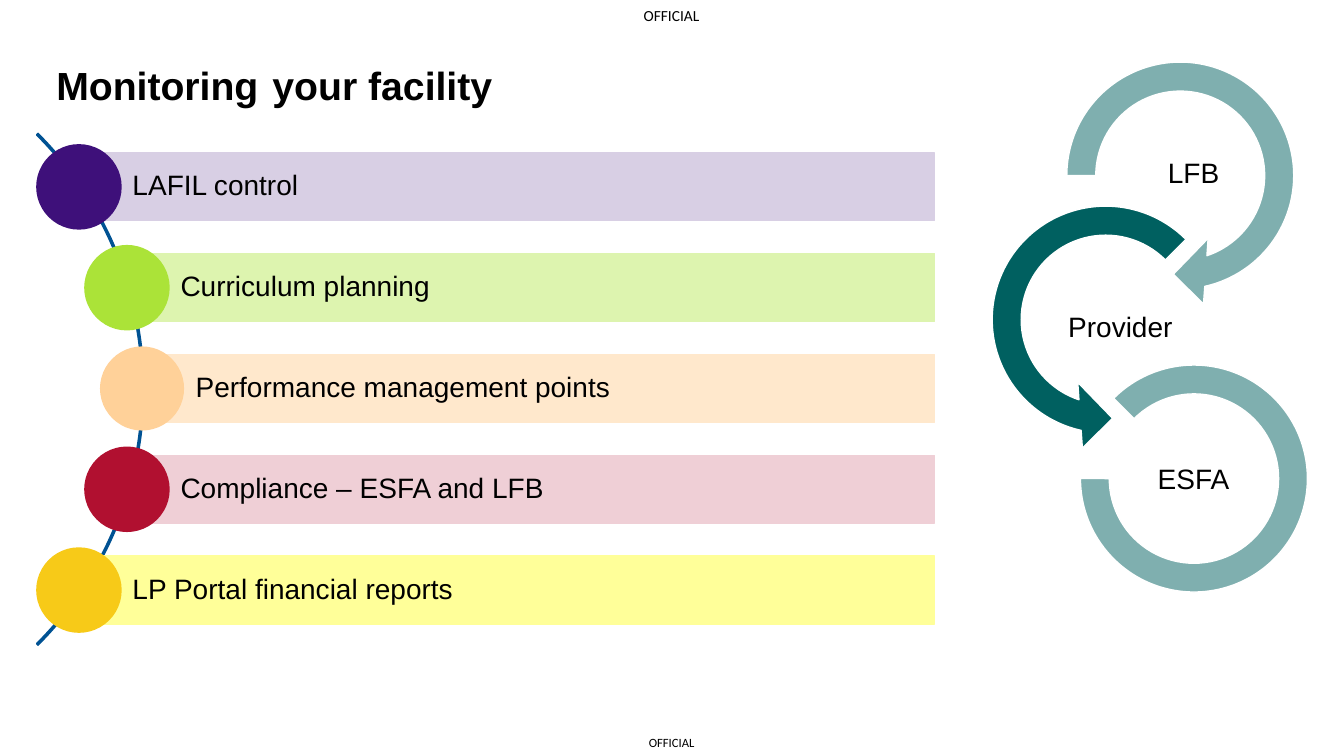
import pptx
import pptx.dml.color
import pptx.enum.shapes
import pptx.enum.text
import pptx.oxml
import pptx.oxml.ns
import pptx.util
from pptx.util import Cm

RGBColor = pptx.dml.color.RGBColor
MSO_SHAPE = pptx.enum.shapes.MSO_SHAPE
PP_ALIGN = pptx.enum.text.PP_ALIGN

BLACK = RGBColor(0x00, 0x00, 0x00)
WHITE = RGBColor(0xFF, 0xFF, 0xFF)
TEAL = RGBColor(0x00, 0x60, 0x60)
BLUE = RGBColor(0x00, 0x52, 0x93)
PURPLE, PALE_PURPLE = RGBColor(0x3E, 0x10, 0x7A), RGBColor(0xD8, 0xCF, 0xE4)
GREEN, PALE_GREEN = RGBColor(0xAB, 0xE3, 0x38), RGBColor(0xDD, 0xF4, 0xAF)
ORANGE, PALE_ORANGE = RGBColor(0xFF, 0xD1, 0x99), RGBColor(0xFF, 0xE8, 0xCC)
RED, PALE_RED = RGBColor(0xB1, 0x10, 0x30), RGBColor(0xEF, 0xCF, 0xD6)
YELLOW, PALE_YELLOW = RGBColor(0xF7, 0xCA, 0x18), RGBColor(0xFF, 0xFF, 0x99)

presentation = pptx.Presentation()
presentation.slide_width = Cm(33.87)
presentation.slide_height = Cm(19.05)
slide = presentation.slides.add_slide(presentation.slide_layouts[6])


def add_filled_shape(kind, left, top, width, height, fill, line, adjustments=()):
    shape = slide.shapes.add_shape(kind, Cm(left), Cm(top), Cm(width), Cm(height))
    shape.shadow.inherit = False
    shape.fill.solid()
    shape.fill.fore_color.rgb = fill
    shape.line.color.rgb = line
    shape.line.width = pptx.util.Pt(1)
    for index, value in enumerate(adjustments):
        shape.adjustments[index] = value
    return shape


def write_text(shape, text, size, font="Arial", align=PP_ALIGN.CENTER, left_inset=0, spacing=0.9):
    """Fill the shape with one vertically centred line of black text."""
    frame = shape.text_frame
    frame.text = text
    frame.word_wrap = True
    frame.vertical_anchor = pptx.enum.text.MSO_ANCHOR.MIDDLE
    frame.margin_left = Cm(left_inset)
    frame.margin_right = frame.margin_top = frame.margin_bottom = 0
    paragraph = frame.paragraphs[0]
    paragraph.alignment = align
    paragraph.line_spacing = spacing
    for run in paragraph.runs:
        run.font.name = font
        run.font.size = pptx.util.Pt(size)
        run.font.color.rgb = BLACK
    return paragraph


# Classification markings
for left, top, width, height, size in [(15.82, 0, 2.21, 0.79, 11), (16, 18.36, 1.85, 0.69, 9)]:
    marking = slide.shapes.add_textbox(Cm(left), Cm(top), Cm(width), Cm(height))
    write_text(marking, "OFFICIAL", size, font="Calibri", spacing=1.0)

# Title, with a wider space after the first word
title = slide.shapes.add_textbox(Cm(1.17), Cm(1.22), Cm(29.21), Cm(1.8))
title_paragraph = write_text(title, "Monitoring", 28, align=PP_ALIGN.LEFT, left_inset=0.25)
for text, size in [(" ", 36), ("your facility", 28)]:
    run = title_paragraph.add_run()
    run.text = text
    run.font.name = "Arial"
    run.font.size = pptx.util.Pt(size)
    run.font.color.rgb = BLACK
for run in title_paragraph.runs:
    run.font.bold = True

# Three-party cycle: kind, left, top, size, adjustments, opacity in percent
cycle_rings = [
    (MSO_SHAPE.CIRCULAR_ARROW, 26.42, 1.1, 6.65, (0.11, 11.42, 45, 108, 0.125), 50),
    (MSO_SHAPE.LEFT_CIRCULAR_ARROW, 24.54, 4.73, 6.65, (0.11, 11.42, 63, 189, 0.125), 100),
    (MSO_SHAPE.BLOCK_ARC, 27.23, 9.2, 5.72, (135, 108, 0.127), 50),
]
for kind, left, top, size, adjustments, opacity in cycle_rings:
    ring = add_filled_shape(kind, left, top, size, size, TEAL, WHITE, adjustments)
    if opacity < 100:
        color = ring.fill._xPr.find(".//" + pptx.oxml.ns.qn("a:srgbClr"))
        alpha = pptx.oxml.parse_xml(
            f'<a:alpha {pptx.oxml.ns.nsdecls("a")} val="{opacity * 1000}"/>')
        color.append(alpha)

for name, left, top, width in [("LFB", 28.24, 3.48, 3.68),
                               ("Provider", 25.58, 7.34, 5.31),
                               ("ESFA", 28.24, 11.18, 3.68)]:
    label = slide.shapes.add_textbox(Cm(left), Cm(top), Cm(width), Cm(1.85))
    write_text(label, name, 20)

# Monitoring topics along a curve
add_filled_shape(MSO_SHAPE.BLOCK_ARC, -14.61, 0.69, 18.24, 18.24, BLUE, BLUE, (189, 27, 0.003))

BAR_RIGHT, BAR_HEIGHT, CIRCLE_SIZE = 23.55, 1.71, 2.12
FIRST_CENTER, ROW_STEP = 4.71, 2.54
topics = [
    ("LAFIL control", 1.99, PURPLE, PALE_PURPLE),
    ("Curriculum planning", 3.2, GREEN, PALE_GREEN),
    ("Performance management points", 3.58, ORANGE, PALE_ORANGE),
    ("Compliance – ESFA and LFB", 3.2, RED, PALE_RED),
    ("LP Portal financial reports", 1.99, YELLOW, PALE_YELLOW),
]
for row, (topic, left, strong, pale) in enumerate(topics):
    center = FIRST_CENTER + row * ROW_STEP
    bar = add_filled_shape(MSO_SHAPE.RECTANGLE, left, center - BAR_HEIGHT / 2,
                           BAR_RIGHT - left, BAR_HEIGHT, pale, pale)
    write_text(bar, topic, 20, align=PP_ALIGN.LEFT, left_inset=1.35)
    circle = add_filled_shape(MSO_SHAPE.OVAL, left - CIRCLE_SIZE / 2, center - CIRCLE_SIZE / 2,
                              CIRCLE_SIZE, CIRCLE_SIZE, strong, strong)
    if strong == ORANGE:
        circle.line.fill.background()

presentation.save("out.pptx")
